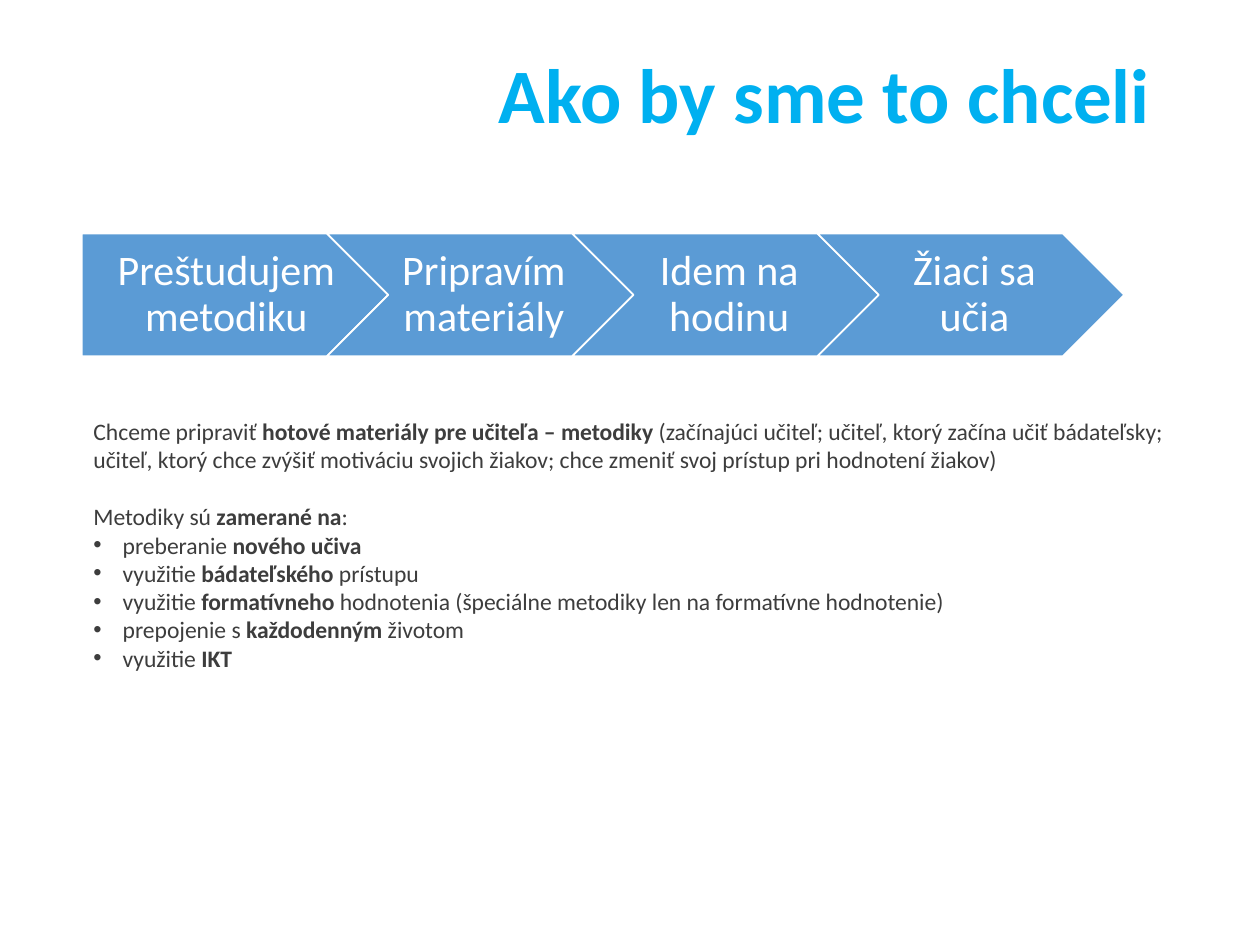
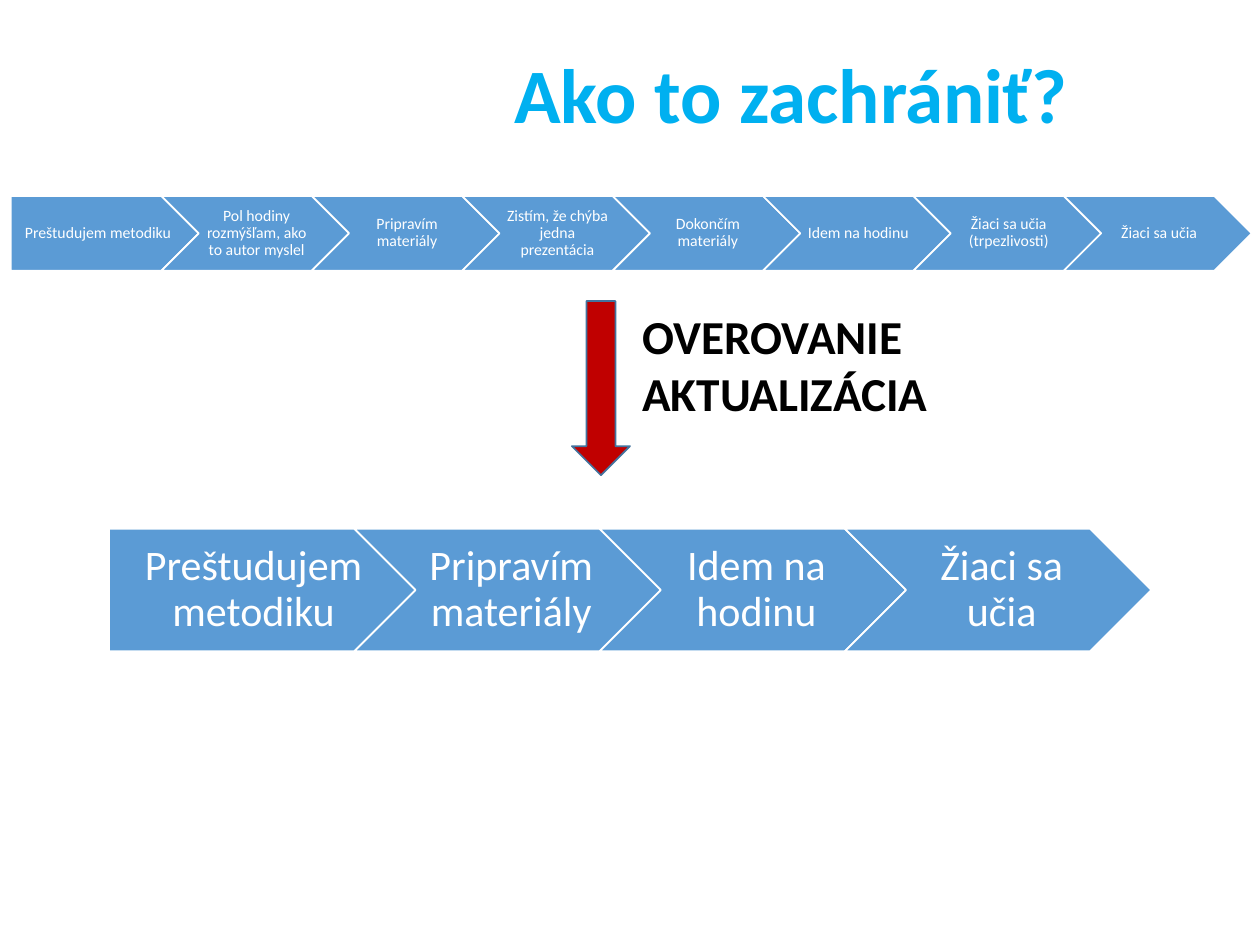
from pptx import Presentation
from pptx.dml.color import RGBColor
from pptx.enum.shapes import MSO_SHAPE
from pptx.enum.text import MSO_ANCHOR, MSO_AUTO_SIZE, PP_ALIGN
from pptx.oxml.xmlchemy import OxmlElement
from pptx.util import Cm, Pt

START = MSO_SHAPE.PENTAGON
STEP = MSO_SHAPE.CHEVRON
DOWN = MSO_SHAPE.DOWN_ARROW
TOP = MSO_ANCHOR.TOP
MIDDLE = MSO_ANCHOR.MIDDLE
LEFT = PP_ALIGN.LEFT
CENTER = PP_ALIGN.CENTER
NO_FIT = MSO_AUTO_SIZE.NONE

FONT = "Calibri"
SKY = RGBColor(0x00, 0xB0, 0xF0)
BLUE = RGBColor(0x5B, 0x9B, 0xD5)
NAVY = RGBColor(0x43, 0x73, 0x9E)
RED = RGBColor(0xC0, 0x00, 0x00)
GREY = RGBColor(0x3D, 0x3D, 0x3D)
WHITE = RGBColor(0xFF, 0xFF, 0xFF)
BLACK = RGBColor(0x00, 0x00, 0x00)

TITLE_RIGHT = 23.65
OVERLAP = 0.8
HANG = 0.59
BODY_SIZE = 13.5
BODY_GAP = 16.2

PLAN = ["Preštudujem metodiku", "Pripravím materiály", "Idem na hodinu", "Žiaci sa učia"]
REALITY = [
    "Preštudujem metodiku",
    "Pol hodiny rozmýšľam, ako to autor myslel",
    "Pripravím materiály",
    "Zistím, že chýba jedna prezentácia",
    "Dokončím materiály",
    "Idem na hodinu",
    "Žiaci sa učia (trpezlivosti)",
    "Žiaci sa učia",
]
INTRO = (
    "Chceme pripraviť *hotové materiály pre učiteľa – metodiky *(začínajúci učiteľ; "
    "učiteľ, ktorý začína učiť bádateľsky; učiteľ, ktorý chce zvýšiť motiváciu svojich "
    "žiakov; chce zmeniť svoj prístup pri hodnotení žiakov)"
)
FOCUS = "Metodiky sú *zamerané na*:"
GOALS = [
    "preberanie *nového učiva",
    "využitie *bádateľského* prístupu",
    "využitie *formatívneho* hodnotenia (špeciálne metodiky len na formatívne hodnotenie)",
    "prepojenie s* každodenným *životom",
    "využitie *IKT",
]


def style(run, size, color, bold=False):
    font = run.font
    font.name = FONT
    font.size = Pt(size)
    font.bold = bold
    font.color.rgb = color


def place(shape, left, top, width, height):
    shape.left, shape.top = Cm(left), Cm(top)
    shape.width, shape.height = Cm(width), Cm(height)


def add_title(slide, text, left):
    title = slide.shapes.title
    place(title, left, 1.02, TITLE_RIGHT - left, 3.68)
    frame = title.text_frame
    frame.text = text
    frame.vertical_anchor = TOP
    frame.auto_size = NO_FIT
    para = frame.paragraphs[0]
    para.alignment = LEFT
    para.line_spacing = 0.9
    style(para.runs[0], 44, SKY, True)


def add_shape(slide, kind, box, fill, line):
    shape = slide.shapes.add_shape(kind, *map(Cm, box))
    shape.shadow.inherit = False
    shape.fill.solid()
    shape.fill.fore_color.rgb = fill
    shape.line.color.rgb = line
    shape.line.width = Pt(1)
    return shape


def add_chain(slide, labels, left, top, width, height, size):
    for i, label in enumerate(labels):
        box = (left + i * width * OVERLAP, top, width, height)
        shape = add_shape(slide, STEP if i else START, box, BLUE, WHITE)
        frame = shape.text_frame
        frame.word_wrap = True
        frame.vertical_anchor = MIDDLE
        frame.margin_left = Cm(size * (0.01 if i else 0.015))
        frame.margin_right = Cm(size / 250)
        frame.margin_top = frame.margin_bottom = Cm(size / 130)
        frame.text = label
        para = frame.paragraphs[0]
        para.alignment = CENTER
        para.line_spacing = 0.9
        style(para.runs[0], size, WHITE)


def set_bullet(para, shown):
    props = para._p.get_or_add_pPr()
    props.set("marL", str(Cm(HANG if shown else 0)))
    props.set("indent", str(Cm(-HANG if shown else 0)))
    mark = OxmlElement("a:buChar" if shown else "a:buNone")
    if shown:
        face = OxmlElement("a:buFont")
        face.set("typeface", "Arial")
        props.append(face)
        mark.set("char", "•")
    props.append(mark)


def add_body(slide):
    body = slide.placeholders[1]
    place(body, 1.63, 8.28, 22.15, 5.46)
    frame = body.text_frame
    frame.auto_size = NO_FIT
    for i, text in enumerate([INTRO, FOCUS, *GOALS]):
        para = frame.add_paragraph() if i else frame.paragraphs[0]
        set_bullet(para, text in GOALS)
        para.space_before = Pt(BODY_GAP if text == FOCUS else 0)
        for j, part in enumerate(text.split("*")):
            run = para.add_run()
            run.text = part
            style(run, BODY_SIZE, GREY, j % 2 == 1)


def add_label(slide, text, box, size):
    frame = slide.shapes.add_textbox(*map(Cm, box)).text_frame
    frame.word_wrap = True
    frame.text = text
    for para in frame.paragraphs:
        style(para.runs[0], size, BLACK, True)


def main():
    deck = Presentation()
    deck.slide_width, deck.slide_height = Cm(25.4), Cm(19.05)

    wish = deck.slides.add_slide(deck.slide_layouts[1])
    add_title(wish, "Ako by sme to chceli", 9.8)
    add_chain(wish, PLAN, 1.65, 4.71, 6.18, 2.47, 24)
    add_body(wish)

    rescue = deck.slides.add_slide(deck.slide_layouts[5])
    add_title(rescue, "Ako to zachrániť?", 10.11)
    add_chain(rescue, PLAN, 2.2, 10.66, 6.18, 2.47, 24)
    add_chain(rescue, REALITY, 0.22, 3.95, 3.79, 1.51, 9)
    add_shape(rescue, DOWN, (11.53, 6.07, 1.17, 3.51), RED, NAVY)
    add_label(rescue, "OVEROVANIE\nAKTUALIZÁCIA", (12.7, 6.07, 6.53, 2.57), 27)

    deck.save("out.pptx")


if __name__ == "__main__":
    main()
